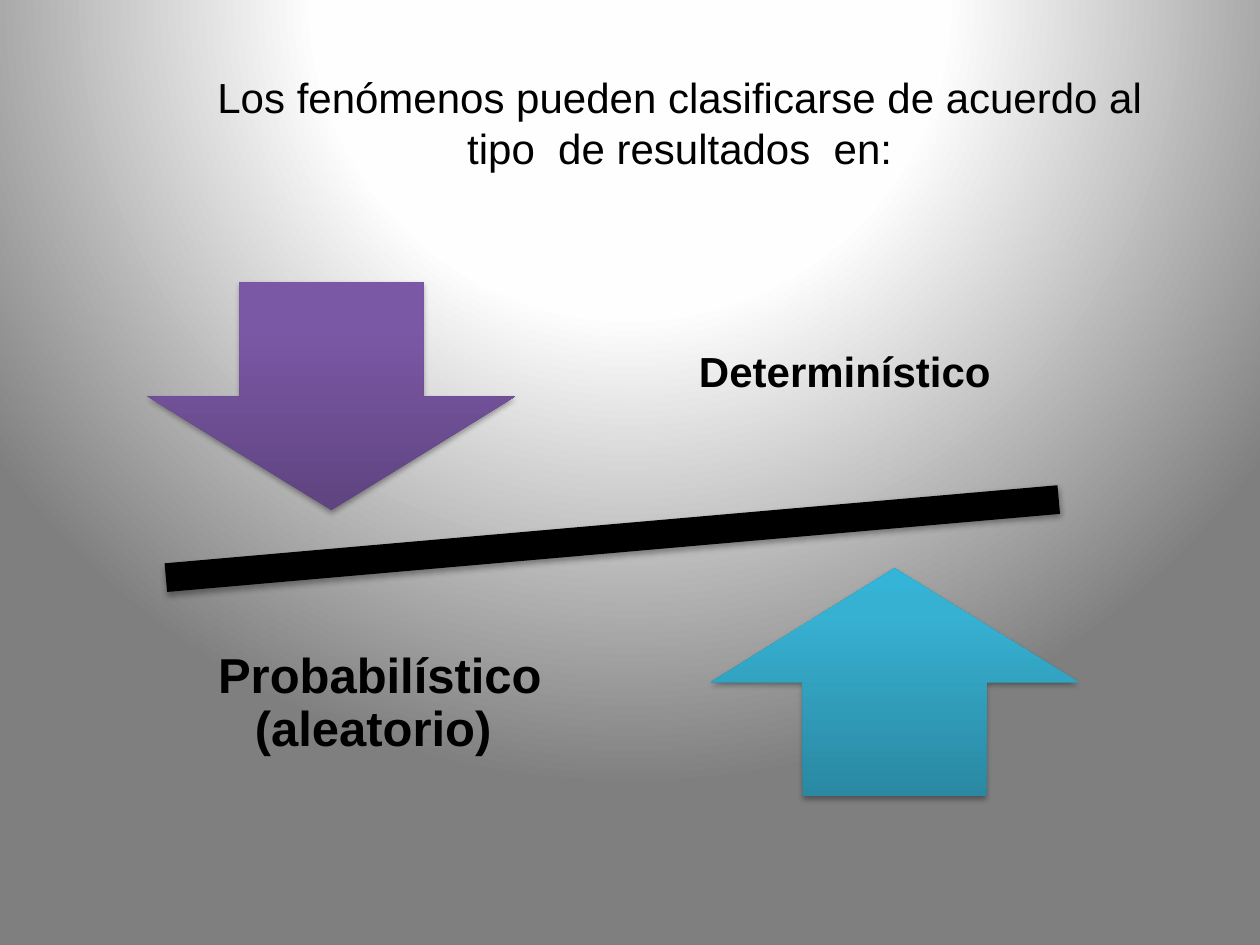
import pptx
import pptx.util
import pptx.dml.color
import pptx.enum.shapes
import pptx.enum.text
import pptx.oxml
import pptx.oxml.ns
from lxml import etree

Pt = pptx.util.Pt
RGBColor = pptx.dml.color.RGBColor
MSO_SHAPE = pptx.enum.shapes.MSO_SHAPE
MSO_ANCHOR = pptx.enum.text.MSO_ANCHOR
MSO_AUTO_SIZE = pptx.enum.text.MSO_AUTO_SIZE
qn = pptx.oxml.ns.qn

BLACK = RGBColor(0x00, 0x00, 0x00)
BACKGROUND_STOPS = [
    (0, RGBColor(0xFF, 0xFF, 0xFF)),
    (40, RGBColor(0xFE, 0xFE, 0xFE)),
    (100, RGBColor(0x7F, 0x7F, 0x7F)),
]
PURPLE_STOPS = [
    (0, RGBColor(0x5F, 0x44, 0x80)),
    (80, RGBColor(0x7B, 0x58, 0xA6)),
    (100, RGBColor(0x7C, 0x57, 0xA8)),
]
TEAL_STOPS = [
    (0, RGBColor(0x2A, 0x88, 0xA2)),
    (80, RGBColor(0x37, 0xB1, 0xD2)),
    (100, RGBColor(0x34, 0xB4, 0xD6)),
]

FONT = "Arial"
TITLE = "Los fenómenos pueden clasificarse de acuerdo al tipo  de resultados  en:"
TITLE_BOX = (105.12, 37.44, 566.64, 65.52)
BAR_BOX = (1.44, 272.88, 696.96, 69.84)
BAR_ROTATION = 355
ARROW_SIZE = (210.24, 130.32)
LABEL_SIZE = (223.92, 136.8)
BRANCHES = [
    {"arrow": MSO_SHAPE.DOWN_ARROW, "arrow_at": (84.24, 161.28), "stops": PURPLE_STOPS,
     "label": "Determinístico", "label_at": (370.8, 145.44), "size": 24, "inset": 13.68},
    {"arrow": MSO_SHAPE.UP_ARROW, "arrow_at": (406.08, 324.72), "stops": TEAL_STOPS,
     "label": "Probabilístico (aleatorio) ", "label_at": (105.12, 334.08), "size": 28, "inset": 15.84},
]


def add_node(parent, tag, **attributes):
    return etree.SubElement(parent, qn(tag), {key: str(value) for key, value in attributes.items()})


def set_gradient(fill, owner, stops):
    fill.gradient()
    gradient = next(owner.iter(qn("a:gradFill")))
    for child in list(gradient):
        gradient.remove(child)
    stop_list = add_node(gradient, "a:gsLst")
    for position, color in stops:
        stop = add_node(stop_list, "a:gs", pos=position * 1000)
        add_node(stop, "a:srgbClr", val=color)
    return gradient


def add_shadowed_shape(shapes, preset, box):
    shape = shapes.add_shape(preset, *map(Pt, box))
    shape.line.fill.background()
    shape.shadow.inherit = False
    effects = shape._element.spPr.find(qn("a:effectLst"))
    shadow = add_node(effects, "a:outerShdw", blurRad=Pt(3.1), dist=Pt(1.8),
                      dir=90 * 60000, rotWithShape=0)
    color = add_node(shadow, "a:srgbClr", val=BLACK)
    add_node(color, "a:alpha", val=35000)
    return shape


def add_text(shapes, box, text, size, bold=False):
    text_box = shapes.add_textbox(*map(Pt, box))
    frame = text_box.text_frame
    frame.word_wrap = True
    frame.text = text
    paragraph = frame.paragraphs[0]
    paragraph.alignment = pptx.enum.text.PP_ALIGN.CENTER
    font = paragraph.runs[0].font
    font.name = FONT
    font.size = Pt(size)
    font.bold = bold
    font.color.rgb = BLACK
    return frame


def add_branch(shapes, branch):
    arrow = add_shadowed_shape(shapes, branch["arrow"], branch["arrow_at"] + ARROW_SIZE)
    gradient = set_gradient(arrow.fill, arrow._element.spPr, branch["stops"])
    add_node(gradient, "a:lin", ang=270 * 60000, scaled=0)

    frame = add_text(shapes, branch["label_at"] + LABEL_SIZE, branch["label"], branch["size"], True)
    frame.vertical_anchor = MSO_ANCHOR.MIDDLE
    inset = Pt(branch["inset"])
    frame.margin_left = frame.margin_right = inset
    frame.margin_top = frame.margin_bottom = inset
    frame.paragraphs[0].line_spacing = 0.9
    frame.paragraphs[0].space_after = Pt(branch["size"] * 0.35)


def main():
    presentation = pptx.Presentation()
    presentation.slide_width = Pt(720)
    presentation.slide_height = Pt(540)
    slide = presentation.slides.add_slide(presentation.slide_layouts[6])

    gradient = set_gradient(slide.background.fill, slide._element, BACKGROUND_STOPS)
    circle = add_node(gradient, "a:path", path="circle")
    add_node(circle, "a:fillToRect", l=50000, t=-80000, r=50000, b=180000)

    title = add_text(slide.shapes, TITLE_BOX, TITLE, 24)
    title.auto_size = MSO_AUTO_SIZE.SHAPE_TO_FIT_TEXT

    diagram = slide.shapes.add_group_shape()
    bar = add_shadowed_shape(diagram.shapes, MSO_SHAPE.MATH_MINUS, BAR_BOX)
    bar.rotation = BAR_ROTATION
    bar.fill.solid()
    bar.fill.fore_color.rgb = BLACK
    for branch in BRANCHES:
        add_branch(diagram.shapes, branch)

    presentation.save("out.pptx")


if __name__ == "__main__":
    main()
